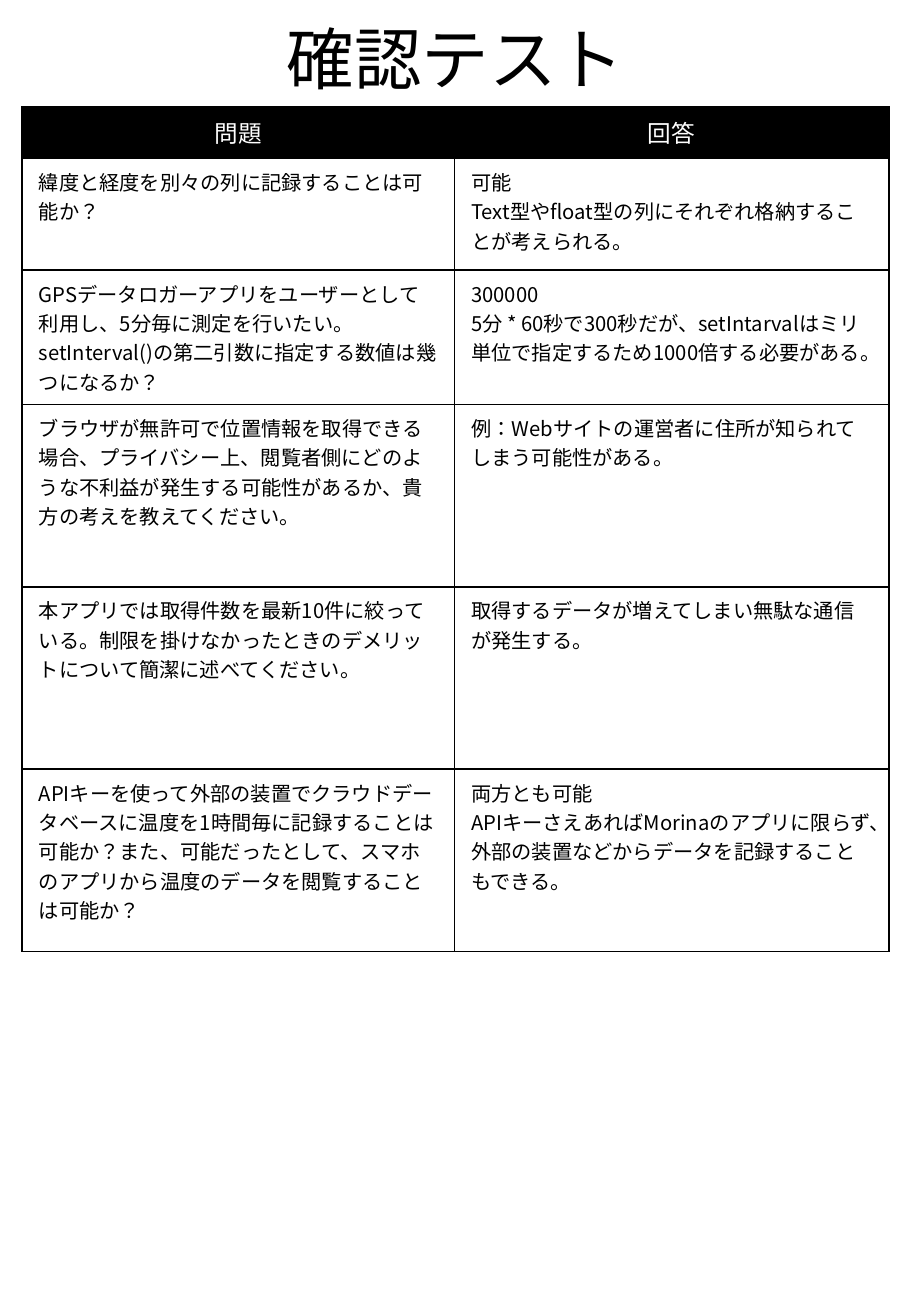
from lxml import etree
from pptx import Presentation
from pptx import util as u
from pptx.dml.color import RGBColor
from pptx.enum import lang, text
from pptx.oxml import ns

TITLE = "確認テスト"
HEADS = ("問題", "回答")
ROWS = [
    ("緯度と経度を別々の列に記録することは可能か？",
     "可能\nText型やfloat型の列にそれぞれ格納することが考えられる。"),
    ("GPSデータロガーアプリをユーザーとして利用し、5分毎に測定を行いたい。"
     "setInterval()の第二引数に指定する数値は幾つになるか？",
     "300000\n5分 * 60秒で300秒だが、setIntarvalはミリ単位で指定するため"
     "1000倍する必要がある。"),
    ("ブラウザが無許可で位置情報を取得できる場合、プライバシー上、閲覧者側に"
     "どのような不利益が発生する可能性があるか、貴方の考えを教えてください。",
     "例：Webサイトの運営者に住所が知られてしまう可能性がある。"),
    ("本アプリでは取得件数を最新10件に絞っている。制限を掛けなかったときの"
     "デメリットについて簡潔に述べてください。",
     "取得するデータが増えてしまい無駄な通信が発生する。"),
    ("APIキーを使って外部の装置でクラウドデータベースに温度を1時間毎に記録する"
     "ことは可能か？また、可能だったとして、スマホのアプリから温度のデータを"
     "閲覧することは可能か？",
     "両方とも可能\nAPIキーさえあればMorinaのアプリに限らず、"
     "外部の装置などからデータを記録することもできる。"),
]
WIDTHS = (3.56, 3.58)
HEIGHTS = (0.4, 0.92, 0.92, 1.5, 1.5, 1.5)


class Theme:
    """Colours, font and type sizes of the quiz sheet."""
    font = "Noto Sans CJK JP"
    ink = RGBColor(0, 0, 0)
    paper = RGBColor(255, 255, 255)
    title, head, body, line = 40, 14, 12, 1


def write(frame, words, size, ink, align):
    for i, line in enumerate(words.split("\n")):
        para = frame.add_paragraph() if i else frame.paragraphs[0]
        para.alignment = align
        run = para.add_run()
        run.text = line
        font = run.font
        font.name, font.size, font.bold = Theme.font, u.Pt(size), False
        font.color.rgb = ink
        font.language_id = lang.MSO_LANGUAGE_ID.JAPANESE
        face = etree.SubElement(run._r.get_or_add_rPr(), ns.qn("a:ea"))
        face.set("typeface", Theme.font)


def edge(cell):
    props = cell._tc.get_or_add_tcPr()
    for side in ("L", "R", "T", "B"):
        line = etree.SubElement(props, ns.qn(f"a:ln{side}"), w=str(u.Pt(Theme.line)))
        fill = etree.SubElement(line, ns.qn("a:solidFill"))
        etree.SubElement(fill, ns.qn("a:srgbClr"), val=str(Theme.ink))


def add_title(slide):
    title = slide.shapes.title
    title.left, title.top, title.width, title.height = map(u.Inches, (0.56, 0.06, 6.38, 0.81))
    frame = title.text_frame
    frame.auto_size = text.MSO_AUTO_SIZE.NONE
    frame.vertical_anchor = text.MSO_ANCHOR.BOTTOM
    write(frame, TITLE, Theme.title, Theme.ink, text.PP_ALIGN.CENTER)
    frame.paragraphs[0].line_spacing = 0.9


def add_quiz(slide):
    box = map(u.Inches, (0.18, 0.88, sum(WIDTHS), sum(HEIGHTS)))
    table = slide.shapes.add_table(len(HEIGHTS), len(WIDTHS), *box).table
    table.horz_banding = False
    for col, width in zip(table.columns, WIDTHS):
        col.width = u.Inches(width)
    for r, (height, words) in enumerate(zip(HEIGHTS, [HEADS] + ROWS)):
        table.rows[r].height = u.Inches(height)
        if r:
            size, ink, back, align = Theme.body, Theme.ink, Theme.paper, text.PP_ALIGN.LEFT
        else:
            size, ink, back, align = Theme.head, Theme.paper, Theme.ink, text.PP_ALIGN.CENTER
        for c, word in enumerate(words):
            cell = table.cell(r, c)
            cell.margin_left = cell.margin_right = u.Inches(0.14)
            cell.margin_top = cell.margin_bottom = u.Inches(0.07)
            edge(cell)
            cell.fill.solid()
            cell.fill.fore_color.rgb = back
            write(cell.text_frame, word, size, ink, align)


def main():
    deck = Presentation()
    deck.slide_width, deck.slide_height = u.Inches(7.5), u.Inches(10.83)
    slide = deck.slides.add_slide(deck.slide_layouts[0])
    sub = slide.placeholders[1].element
    sub.getparent().remove(sub)
    add_title(slide)
    add_quiz(slide)
    deck.save("out.pptx")


if __name__ == "__main__":
    main()
